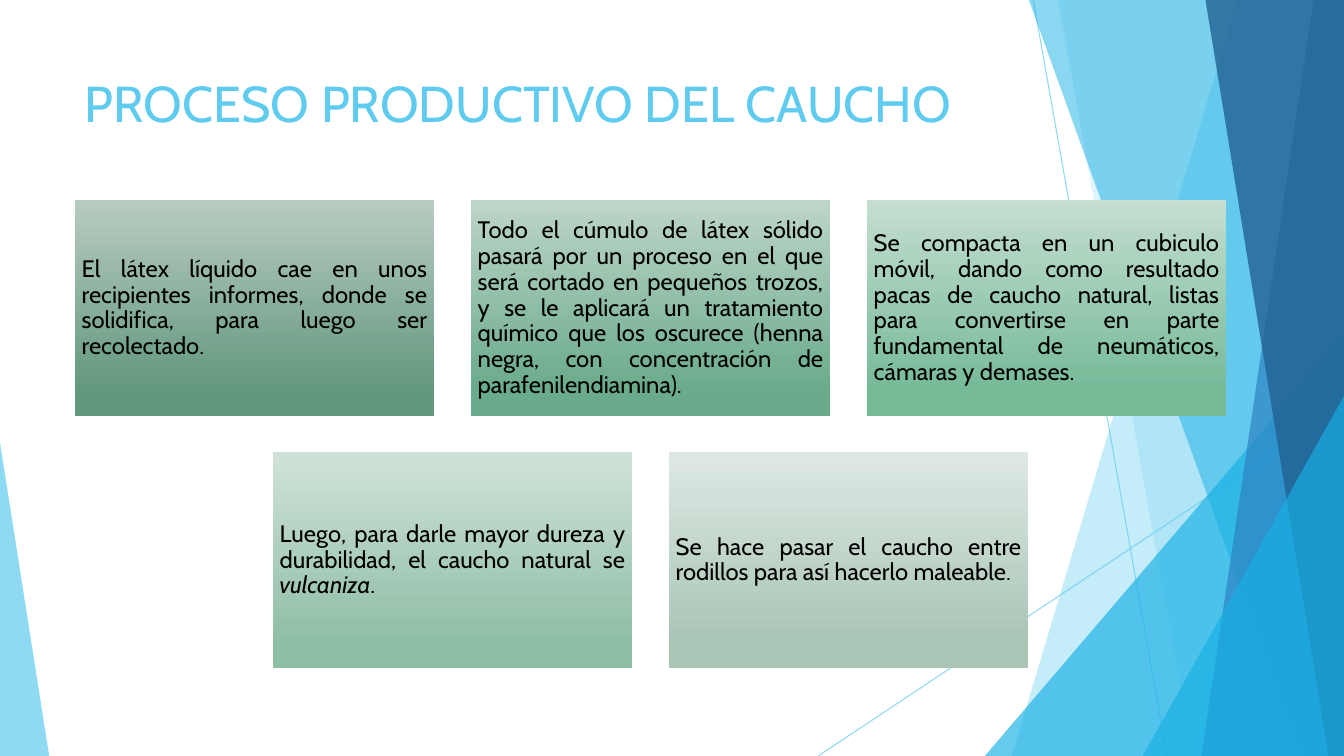
from lxml.etree import SubElement
from pptx import Presentation
from pptx.dml.color import RGBColor
from pptx.enum.shapes import MSO_CONNECTOR, MSO_SHAPE
from pptx.enum.text import MSO_ANCHOR, MSO_AUTO_SIZE, PP_ALIGN
from pptx.oxml.ns import qn
from pptx.util import Cm, Pt

FONT = "Cabin"
SKY, CYAN, BLUE, NAVY = "5FCBEF", "17B0E4", "2E83C3", "226292"
SLIDE_W, SLIDE_H = 33.87, 19.05

# Each step: gradient top, gradient bottom, runs of (text, italic)
STEPS = [
    ("B8CBC1", "63987E", [
        ("El látex líquido cae en unos recipientes informes, donde se "
         "solidifica, para luego ser recolectado.", False)]),
    ("BDD5C8", "6AAB8B", [
        ("Todo el cúmulo de látex sólido pasará por un proceso en el que será "
         "cortado en pequeños trozos, y se le aplicará un tratamiento químico "
         "que los oscurece (henna negra, con concentración de "
         "parafenilendiamina).", False)]),
    ("C4DED0", "76BA98", [
        ("Se compacta en un cubiculo móvil, dando como resultado pacas de "
         "caucho natural, listas para convertirse en parte fundamental de "
         "neumáticos, cámaras y demases.", False)]),
    ("D0E2D8", "8FBEA6", [
        ("Luego, para darle mayor dureza y durabilidad, el caucho natural se ",
         False), ("vulcaniza", True), (".", False)]),
    ("DEE8E3", "A9C5B6", [
        ("Se hace pasar el caucho entre rodillos para así hacerlo maleable.",
         False)]),
]


def color(hex_code):
    return RGBColor.from_string(hex_code)


def set_alpha(shape, percent):
    rgb = shape._element.spPr.find(".//" + qn("a:srgbClr"))
    SubElement(rgb, qn("a:alpha"), val=str(percent * 1000))


def paint(shape, hex_code, alpha):
    shape.shadow.inherit = False
    shape.fill.solid()
    shape.fill.fore_color.rgb = color(hex_code)
    shape.line.fill.background()
    set_alpha(shape, alpha)


def add_ray(slide, x1, y1, x2, y2):
    ray = slide.shapes.add_connector(
        MSO_CONNECTOR.STRAIGHT, Cm(x1), Cm(y1), Cm(x2), Cm(y2))
    ray.line.width = Pt(0.75)
    ray.line.color.rgb = color(SKY)
    set_alpha(ray, 70)
    SubElement(ray._element.spPr, qn("a:effectLst"))


def add_corner(slide, left, top, width, height, apex, hex_code, alpha):
    corner = slide.shapes.add_shape(MSO_SHAPE.ISOSCELES_TRIANGLE, Cm(left),
                                    Cm(top), Cm(width), Cm(height))
    corner.adjustments[0] = apex
    paint(corner, hex_code, alpha)


def add_facet(slide, right, top, bottom, upper_x, lower_x, hex_code, alpha):
    outline = slide.shapes.build_freeform(Cm(upper_x), Cm(top))
    outline.add_line_segments([(Cm(right), Cm(top)), (Cm(right), Cm(bottom)),
                               (Cm(lower_x), Cm(bottom))], close=True)
    paint(outline.convert_to_shape(), hex_code, alpha)


def add_fan(slide, left, top, width, height):
    """Translucent facets along the right edge."""
    right, bottom = left + width, top + height

    def facet(upper_x, lower_x, hex_code, alpha):
        add_facet(slide, right, top, bottom, left + upper_x, left + lower_x,
                  hex_code, alpha)

    def corner(x, y):
        add_corner(slide, left + x, top + y, width - x, height - y, 1, CYAN, 66)

    add_ray(slide, left + 5.42, top, left + 8.79, bottom)
    add_ray(slide, right, top + 10.24, left, bottom)
    facet(10.57, 4.88, SKY, 36)
    facet(6.05, 9.43, SKY, 20)
    corner(4.2, 8.46)
    facet(5.31, 12.17, CYAN, 50)
    facet(12.48, 9.66, BLUE, 70)
    facet(9.76, 12.86, NAVY, 80)
    corner(8.18, 9.98)


def add_title(slide, left, top, width, height):
    title = slide.shapes.title
    title.left, title.top = Cm(left), Cm(top)
    title.width, title.height = Cm(width), Cm(height)
    frame = title.text_frame
    frame.word_wrap = True
    frame.auto_size = MSO_AUTO_SIZE.NONE
    frame.vertical_anchor = MSO_ANCHOR.TOP
    heading = frame.paragraphs[0]
    heading.alignment = PP_ALIGN.LEFT
    run = heading.add_run()
    run.text = "PROCESO PRODUCTIVO DEL CAUCHO"
    run.font.name, run.font.size = FONT, Pt(36)
    run.font.color.rgb = color(SKY)


def add_step(slide, left, top, width, height, step):
    light, dark, pieces = step
    card = slide.shapes.add_shape(MSO_SHAPE.RECTANGLE, Cm(left), Cm(top),
                                  Cm(width), Cm(height))
    card.shadow.inherit = False
    card.line.fill.background()
    card.fill.gradient()
    card.fill.gradient_angle = 270
    for stop, hex_code, position in zip(card.fill.gradient_stops,
                                        (light, dark), (0, 0.88)):
        stop.color.rgb = color(hex_code)
        stop.position = position

    frame = card.text_frame
    frame.word_wrap = True
    frame.vertical_anchor = MSO_ANCHOR.MIDDLE
    frame.margin_left = frame.margin_right = Cm(0.18)
    frame.margin_top = frame.margin_bottom = Cm(0.18)
    description = frame.paragraphs[0]
    description.alignment = PP_ALIGN.JUSTIFY
    description.line_spacing = 0.9
    for text, italic in pieces:
        run = description.add_run()
        run.text = text
        run.font.name, run.font.size = FONT, Pt(17)
        run.font.italic = italic
        run.font.color.rgb = color("000000")


def add_steps(slide, left, top, width, height, per_row=3, gap=0.91):
    """Rows of equal cards, each row centred in the box."""
    rows = [STEPS[i:i + per_row] for i in range(0, len(STEPS), per_row)]
    card_w = (width - gap * (per_row - 1)) / per_row
    card_h = (height - gap * (len(rows) - 1)) / len(rows)
    for r, row in enumerate(rows):
        indent = (per_row - len(row)) * (card_w + gap) / 2
        for c, step in enumerate(row):
            add_step(slide, left + indent + c * (card_w + gap),
                     top + r * (card_h + gap), card_w, card_h, step)


def main():
    deck = Presentation()
    deck.slide_width, deck.slide_height = Cm(SLIDE_W), Cm(SLIDE_H)
    slide = deck.slides.add_slide(deck.slide_layouts[5])

    # Background decoration
    add_fan(slide, 20.62, 0, SLIDE_W - 20.62, SLIDE_H)
    add_corner(slide, 0, 11.15, 1.24, SLIDE_H - 11.15, 0, SKY, 70)

    # Content
    add_title(slide, 1.88, 1.7, 23.88, 3.66)
    add_steps(slide, 1.88, 5.05, 29.03, 11.79)
    deck.save("out.pptx")


if __name__ == "__main__":
    main()
